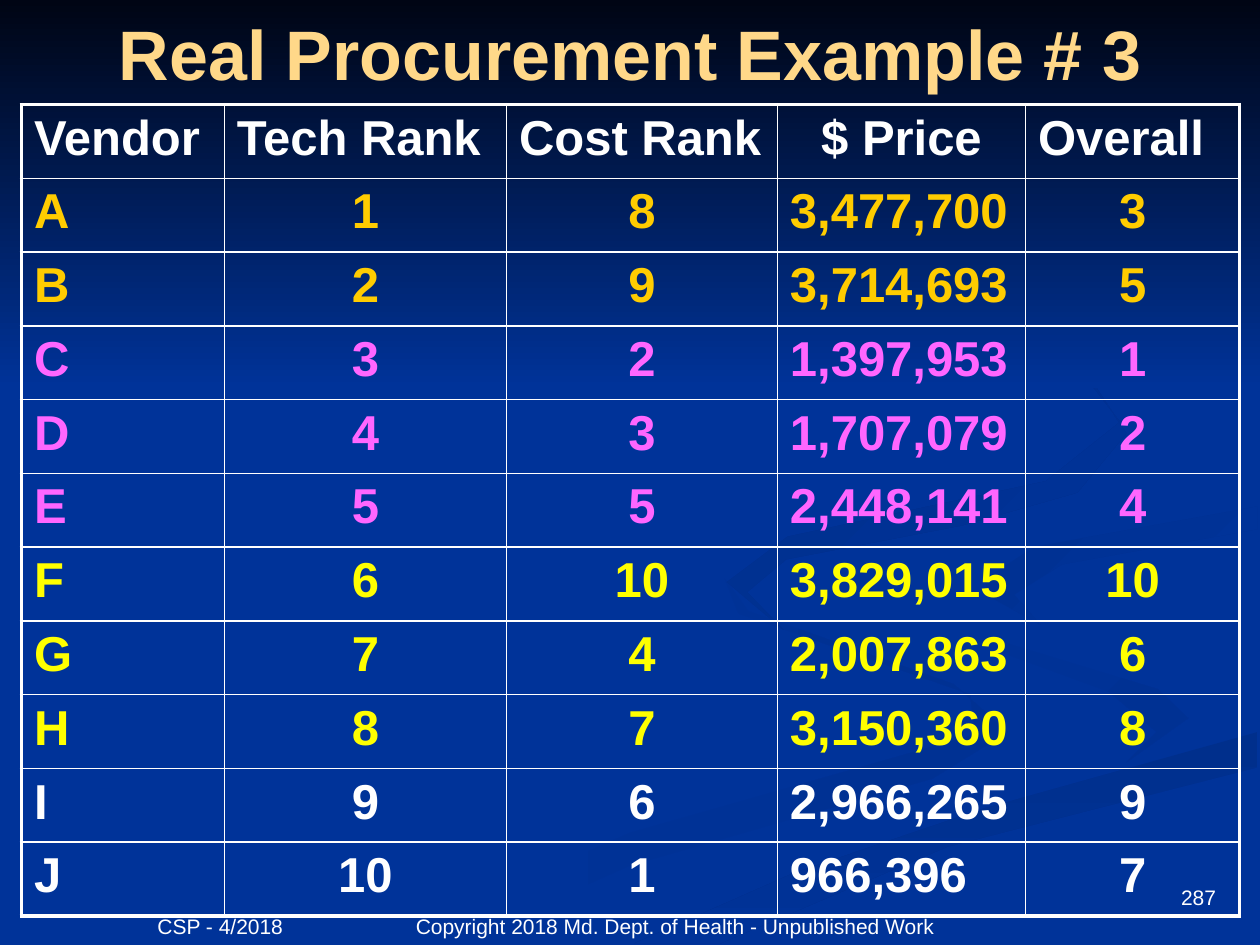
import pptx
import pptx.util
import pptx.dml.color
import pptx.enum.shapes
import pptx.enum.text
import pptx.oxml
import pptx.oxml.ns
from pptx.util import Inches

RGB = pptx.dml.color.RGBColor
BLUE = RGB.from_string("003399")
DEEP = RGB.from_string("002F8C")
SHADE = RGB.from_string("003193")
NIGHT = RGB.from_string("000514")
WHITE = RGB.from_string("FFFFFF")
SAND = RGB.from_string("FFD889")
GOLD = RGB.from_string("FFCC00")
PINK = RGB.from_string("FF66FF")
YELLOW = RGB.from_string("FFFF00")
ALIGN = pptx.enum.text.PP_ALIGN
ANCHOR = pptx.enum.text.MSO_ANCHOR


def paint(shape, first, last, angle):
    """Fill with a two-colour gradient, angle counted clockwise."""
    shape.shadow.inherit = False
    shape.line.fill.background()
    shape.fill.gradient()
    shape.fill.gradient_angle = -angle % 360
    for stop, color in zip(shape.fill.gradient_stops, (first, last)):
        stop.color.rgb = color


def write(frame, text, size, color, align, bold=False):
    frame.text = text
    frame.word_wrap = True
    para = frame.paragraphs[0]
    para.alignment = align
    para.font.name = "Arial"
    para.font.size = pptx.util.Pt(size)
    para.font.bold = bold
    para.font.color.rgb = color


prs = pptx.Presentation()
prs.slide_width, prs.slide_height = Inches(10), Inches(7.5)
slide = prs.slides.add_slide(prs.slide_layouts[5])
shapes = slide.shapes
slide.background.fill.solid()
slide.background.fill.fore_color.rgb = BLUE

# Background ribbons: outline in inches, colours, angle
ribbons = [
    ([(5.75, 4.59), (5.94, 4.85), (7.57, 5.43), (8, 5.81), (7.4, 6.18),
      (5, 6.87), (3.61, 7.49), (3, 7.49), (5, 6.61), (7.74, 5.83),
      (7.7, 5.51), (5.86, 4.87)], BLUE, SHADE, 0),
    ([(7.24, 4.64), (7.58, 4.98), (9.19, 5.47), (9.43, 5.7), (8.94, 6.05),
      (9.18, 5.81), (8.8, 5.49), (7.46, 5)], BLUE, SHADE, 45),
    ([(5.03, 7.49), (6.3, 6.93), (7.8, 6.42), (9.98, 5.81), (9.98, 6.09),
      (7.52, 6.72), (5.71, 7.49)], DEEP, BLUE, 90),
    ([(7.81, 4.6), (8.21, 4.34), (9.98, 4.02), (9.98, 4.2), (8.43, 4.48),
      (8.05, 4.72), (8.26, 4.96), (7.86, 4.74)], SHADE, BLUE, 45),
    ([(7.62, 2.33), (8.54, 2.83), (8.94, 3.44), (8.55, 3.91), (7.64, 4.17),
      (6.24, 4.44), (5.93, 4.7), (6.22, 5), (5.77, 4.62), (6.25, 4.26),
      (8.3, 3.82), (8.89, 3.35), (8.46, 2.79)], DEEP, BLUE, 45),
]
for points, first, last, angle in ribbons:
    spots = [(Inches(x), Inches(y)) for x, y in points]
    build = shapes.build_freeform(*spots[0])
    build.add_line_segments(spots[1:])
    paint(build.convert_to_shape(), first, last, angle)

band = shapes.add_shape(pptx.enum.shapes.MSO_SHAPE.RECTANGLE, 0, 0, Inches(10), Inches(3.08))
paint(band, NIGHT, BLUE, 90)

number = shapes.add_textbox(Inches(8.25), Inches(6.75), Inches(1.5), Inches(0.52)).text_frame
number.vertical_anchor = ANCHOR.BOTTOM
write(number, "287", 12, WHITE, ALIGN.RIGHT)

title = shapes.title
title.left, title.top, title.width, title.height = Inches(0.75), 0, Inches(8.5), Inches(0.83)
title.text_frame.vertical_anchor = ANCHOR.MIDDLE
write(title.text_frame, "Real Procurement Example # 3", 40, SAND, ALIGN.CENTER, True)
title._element.getparent().append(title._element)  # bring in front of the band

# Vendors in order of tech rank: cost rank, price, overall
bids = ["8 3,477,700 3", "9 3,714,693 5", "2 1,397,953 1", "3 1,707,079 2",
        "5 2,448,141 4", "10 3,829,015 10", "4 2,007,863 6", "7 3,150,360 8",
        "6 2,966,265 9", "1 966,396 7"]
rows = [["Vendor", "Tech Rank", "Cost Rank", "$ Price", "Overall"]]
for rank, (vendor, bid) in enumerate(zip("ABCDEFGHIJ", bids), 1):
    rows.append([vendor, str(rank), *bid.split()])
colors = [WHITE] + [GOLD] * 2 + [PINK] * 3 + [YELLOW] * 3 + [WHITE] * 2
widths = [1.61, 2.24, 2.15, 1.97, 1.7]
end_row, end_col = len(rows) - 1, len(widths) - 1
table = shapes.add_table(len(rows), len(widths), Inches(0.17), Inches(0.83),
                         Inches(9.67), Inches(6.44)).table
for col, width in zip(table.columns, widths):
    col.width = Inches(width)
for r, row in enumerate(rows):
    for c, text in enumerate(row):
        cell = table.cell(r, c)
        middle = c == 3 if r == 0 else c in (1, 2, 4)
        write(cell.text_frame, text, 28, colors[r],
              ALIGN.CENTER if middle else ALIGN.LEFT, True)
        cell.fill.background()
        props = cell._tc.get_or_add_tcPr()
        edges = {"L": c == 0, "R": c == end_col, "T": r == 0, "B": r == end_row}
        for place, (side, outer) in enumerate(edges.items()):
            thick = pptx.util.Pt(2.25 if outer else 1)
            props.insert(place, pptx.oxml.parse_xml(
                f'<a:ln{side} {pptx.oxml.ns.nsdecls("a")} w="{thick}">'
                f'<a:solidFill><a:srgbClr val="{WHITE}"/></a:solidFill></a:ln{side}>'))

footer = shapes.add_textbox(Inches(0.33), Inches(6.83), Inches(8), Inches(0.67)).text_frame
footer.vertical_anchor = ANCHOR.BOTTOM
footer.margin_left = Inches(0.92)
write(footer, "CSP - 4/2018\tCopyright 2018 Md. Dept. of Health - Unpublished Work",
      12, WHITE, ALIGN.LEFT)
tabs = pptx.oxml.parse_xml(
    f'<a:tabLst {pptx.oxml.ns.nsdecls("a")}><a:tab pos="{Inches(2.05)}" algn="l"/></a:tabLst>')
footer.paragraphs[0]._p.get_or_add_pPr().insert(0, tabs)

prs.save("out.pptx")
